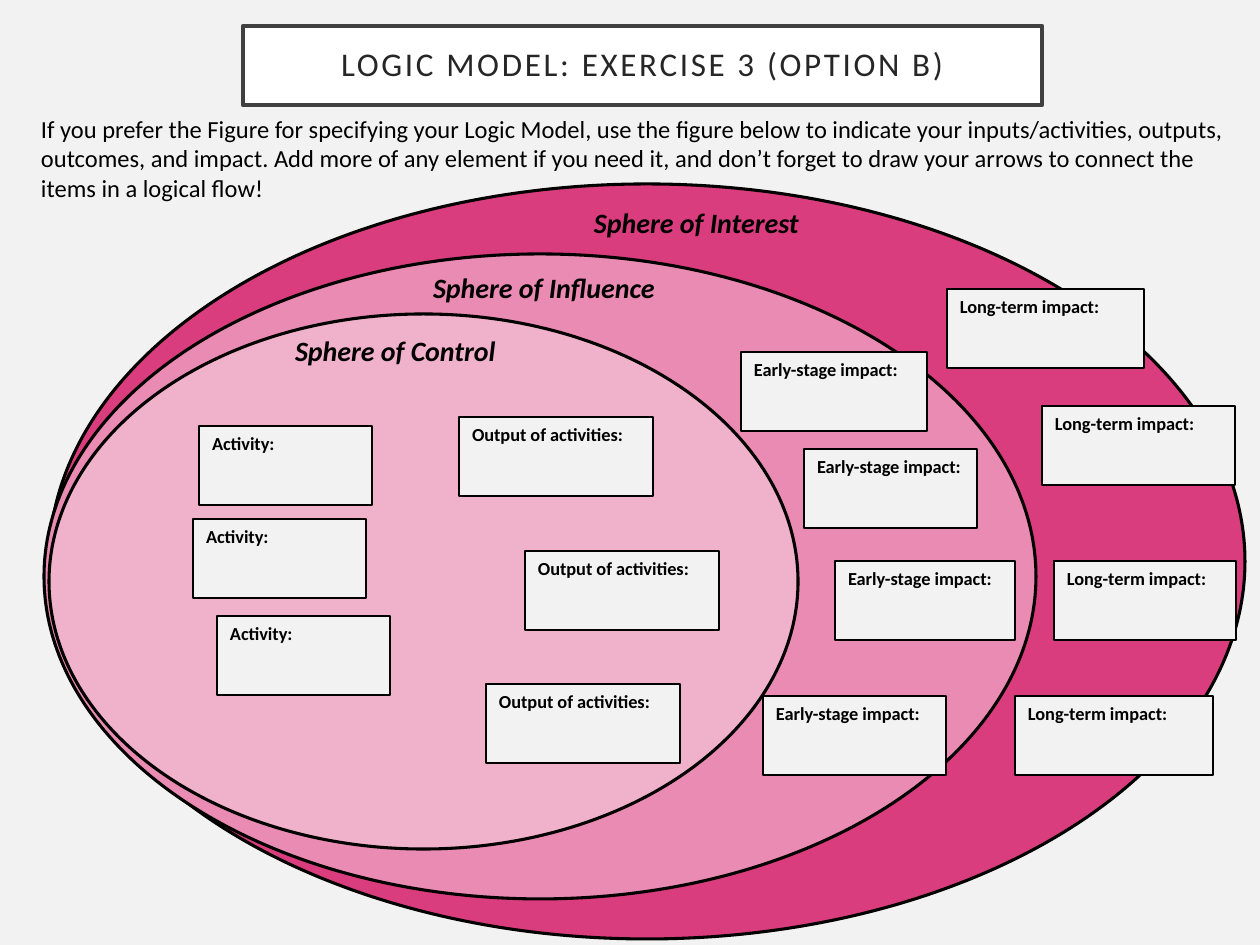
from dataclasses import dataclass

from pptx import Presentation
from pptx.dml.color import RGBColor
from pptx.enum.shapes import MSO_SHAPE as Preset
from pptx.enum.text import MSO_ANCHOR as Anchor, MSO_AUTO_SIZE as AutoSize, PP_ALIGN as Align
from pptx.util import Emu, Pt

EMU_PER_PX = 914400 / 126
FONT = "Calibri"
BLACK, PAPER = "000000", "F2F2F2"
BOX_HEIGHT = 79
INSET_X, INSET_Y = 13, 6


@dataclass(frozen=True)
class Area:
    """A rectangle on the slide in px."""
    left: int
    top: int
    width: int
    height: int

    def emu(self) -> list[Emu]:
        """Return left, top, width and height in EMU."""
        return [px(n) for n in (self.left, self.top, self.width, self.height)]


@dataclass(frozen=True)
class Sphere:
    """A nested ellipse with its heading and fill colour."""
    heading: str
    fill: str
    ellipse: Area
    heading_left: int
    heading_top: int


@dataclass(frozen=True)
class BoxGroup:
    """Boxes that share a caption, each given as left, top and width."""
    caption: str
    places: tuple[tuple[int, int, int], ...]


SPHERES = (
    Sphere("Sphere of Interest", "DA3D7E", Area(49, 184, 1196, 755), 581, 199),
    Sphere("Sphere of Influence", "E98BB2", Area(44, 254, 992, 645), 420, 265),
    Sphere("Sphere of Control", "F0B1CB", Area(49, 314, 749, 535), 282, 328),
)
BOX_GROUPS = (
    BoxGroup("Activity:", ((199, 426, 173), (193, 519, 173), (217, 616, 173))),
    BoxGroup("Output of activities:", ((459, 417, 194), (525, 551, 194), (486, 684, 194))),
    BoxGroup("Early-stage impact:",
             ((741, 352, 186), (804, 449, 173), (835, 561, 180), (763, 696, 183))),
    BoxGroup("Long-term impact:",
             ((947, 289, 197), (1042, 406, 193), (1054, 561, 182), (1015, 696, 198))),
)
INTRO = (
    "If you prefer the Figure for specifying your Logic Model, use the figure below to "
    "indicate your inputs/activities, outputs, outcomes, and impact. Add more of any element "
    "if you need it, and don’t forget to draw your arrows to connect the items in a logical flow!"
)


def px(length: int) -> Emu:
    """Convert px to EMU."""
    return Emu(round(length * EMU_PER_PX))


def color(code: str) -> RGBColor:
    """Turn a hex string into a colour."""
    return RGBColor.from_string(code)


def paint(shape, fill: str, line: str, weight: float) -> None:
    """Set the fill and outline of a shape."""
    shape.fill.solid()
    shape.fill.fore_color.rgb = color(fill)
    shape.line.color.rgb = color(line)
    shape.line.width = Pt(weight)


def write(shape, text: str, *, size: float, ink: str = BLACK, bold: bool = False,
          italic: bool = False, align: Align = Align.LEFT, anchor: Anchor = Anchor.TOP,
          inset_x: int = INSET_X, inset_y: int = INSET_Y,
          line_spacing: float = 1.0, tracking: float = 0) -> None:
    """Put formatted text in a shape."""
    frame = shape.text_frame
    frame.word_wrap = True
    frame.auto_size = AutoSize.NONE
    frame.vertical_anchor = anchor
    frame.margin_left = frame.margin_right = px(inset_x)
    frame.margin_top = frame.margin_bottom = px(inset_y)
    paragraph = frame.paragraphs[0]
    paragraph.alignment = align
    paragraph.line_spacing = line_spacing
    run = paragraph.add_run()
    run.text = text
    font = run.font
    font.name, font.size, font.bold, font.italic = FONT, Pt(size), bold, italic
    font.color.rgb = color(ink)
    if tracking:
        run._r.get_or_add_rPr().set("spc", str(round(tracking * 100)))


def draw_shape(slide, preset: Preset, area: Area, fill: str, weight: float):
    """Add a black-outlined shape without shadow."""
    shape = slide.shapes.add_shape(preset, *area.emu())
    shape.shadow.inherit = False
    paint(shape, fill, BLACK, weight)
    return shape


def draw_title(slide) -> None:
    """Place and format the title placeholder."""
    title = slide.shapes.title
    title.left, title.top, title.width, title.height = Area(243, 26, 799, 79).emu()
    paint(title, "FFFFFF", "404040", 2.5)
    write(title, "LOGIC MODEL: EXERCISE 3 (OPTION B)", size=18.9, ink="262626",
          align=Align.CENTER, anchor=Anchor.MIDDLE, inset_x=25, inset_y=25,
          line_spacing=0.9, tracking=1.5)


def draw_spheres(slide) -> None:
    """Draw the nested ellipses, then their headings."""
    for sphere in SPHERES:
        draw_shape(slide, Preset.OVAL, sphere.ellipse, sphere.fill, 1.75)
    for sphere in SPHERES:
        area = Area(sphere.heading_left, sphere.heading_top, 348, 47)
        heading = slide.shapes.add_textbox(*area.emu())
        write(heading, sphere.heading, size=16, bold=True, italic=True)


def draw_boxes(slide, group: BoxGroup) -> None:
    """Draw every box of one group."""
    for left, top, width in group.places:
        box = draw_shape(slide, Preset.RECTANGLE, Area(left, top, width, BOX_HEIGHT), PAPER, 1.5)
        write(box, group.caption, size=10.5, bold=True)


def main() -> None:
    """Build and save the slide."""
    deck = Presentation()
    deck.slide_width, deck.slide_height = px(1260), px(945)
    slide = deck.slides.add_slide(deck.slide_layouts[5])
    slide.background.fill.solid()
    slide.background.fill.fore_color.rgb = color(PAPER)
    draw_title(slide)
    draw_spheres(slide)
    intro = slide.shapes.add_textbox(*Area(28, 108, 1230, 102).emu())
    write(intro, INTRO, size=14)
    for group in BOX_GROUPS:
        draw_boxes(slide, group)
    deck.save("out.pptx")


if __name__ == "__main__":
    main()
